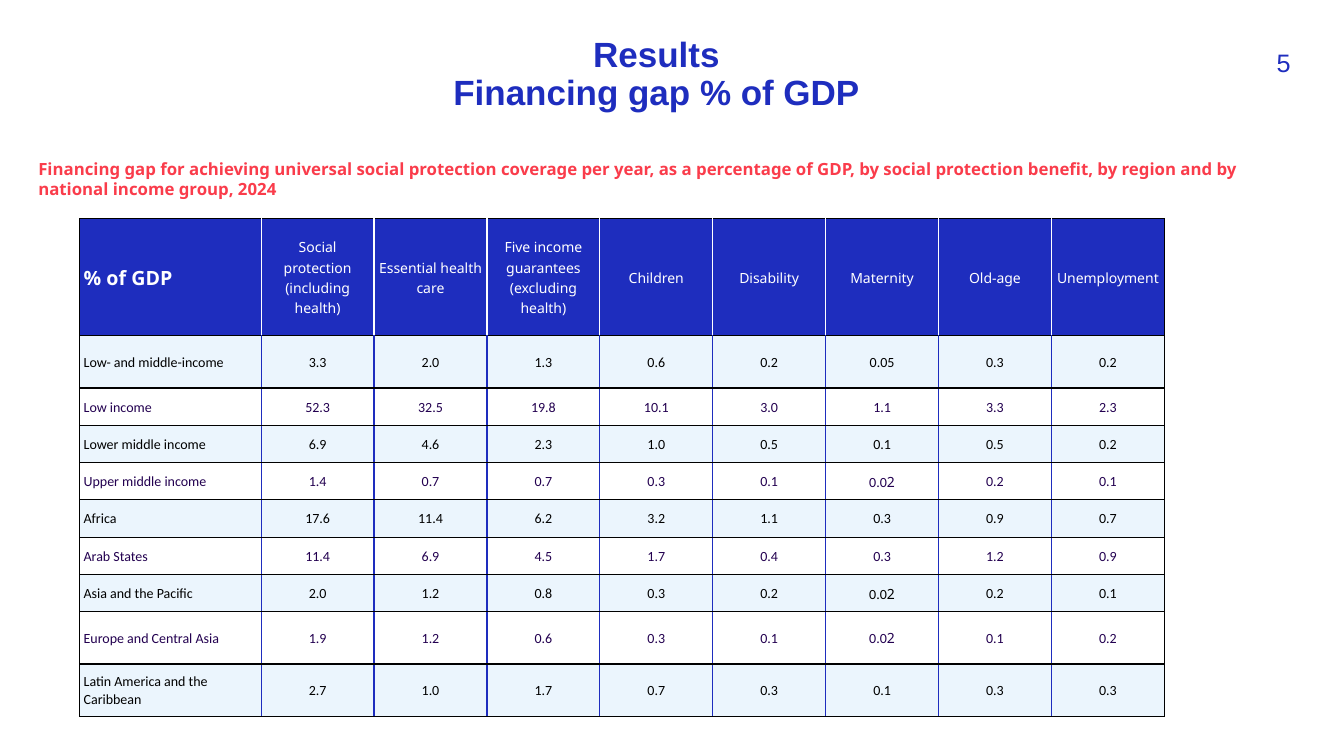
"""Builds a slide with a table of social protection financing gaps as % of GDP."""
from lxml import etree
from pptx import Presentation
from pptx.dml.color import RGBColor
from pptx.enum.text import MSO_ANCHOR, PP_ALIGN
from pptx.oxml.ns import qn
from pptx.util import Inches, Pt

LEFT, CENTER, RIGHT = PP_ALIGN.LEFT, PP_ALIGN.CENTER, PP_ALIGN.RIGHT
MIDDLE = MSO_ANCHOR.MIDDLE
BLUE, RED, WHITE, BLACK = "1E2DBE", "FA3C4B", "FFFFFF", "000000"
PURPLE, PALE = "230050", "EBF5FD"


def style(p, size, font, color, bold=False):
    for r in p.runs:
        r.font.size = Pt(size)
        r.font.name = font
        r.font.bold = bold
        r.font.color.rgb = RGBColor.from_string(color)


def border(cell, **sides):
    for i, (side, color) in enumerate(sides.items()):
        ln = etree.Element(qn("a:ln" + side), w=str(Pt(1)))
        fill = etree.SubElement(ln, qn("a:solidFill"))
        etree.SubElement(fill, qn("a:srgbClr"), val=color)
        cell._tc.get_or_add_tcPr().insert(i, ln)


prs = Presentation()
prs.slide_width, prs.slide_height = Inches(13.33), Inches(7.5)
s = prs.slides.add_slide(prs.slide_layouts[6])

texts = [
    ("Results\vFinancing gap % of GDP", 0.38, 0.37, 12.26, 0.79,
     CENTER, 25, "Arial", BLUE, True, 0.9),
    ("5", 12.21, 0.47, 0.59, 0.31, RIGHT, 18, "Arial", BLUE, False, 1.0),
    ("Financing gap for achieving universal social protection coverage per year, "
     "as a percentage of GDP, by social protection benefit, by region and by "
     "national income group, 2024", 0.38, 1.57, 12.26, 0.43,
     LEFT, 12, "Noto Sans", RED, True, 1.0),
]
for text, x, y, w, h, align, size, font, color, bold, spacing in texts:
    tf = s.shapes.add_textbox(Inches(x), Inches(y), Inches(w), Inches(h)).text_frame
    tf.word_wrap = True
    tf.margin_left = tf.margin_right = tf.margin_top = tf.margin_bottom = 0
    p = tf.paragraphs[0]
    p.text = text
    p.alignment = align
    p.line_spacing = spacing
    style(p, size, font, color, bold)

rows = [
    ["% of GDP", "Social protection (including health)", "Essential health care",
     "Five income guarantees (excluding health)", "Children", "Disability",
     "Maternity", "Old-age", "Unemployment"],
    ["Low- and middle-income", "3.3", "2.0", "1.3", "0.6", "0.2", "0.05", "0.3", "0.2"],
    ["Low income", "52.3", "32.5", "19.8", "10.1", "3.0", "1.1", "3.3", "2.3"],
    ["Lower middle income", "6.9", "4.6", "2.3", "1.0", "0.5", "0.1", "0.5", "0.2"],
    ["Upper middle income", "1.4", "0.7", "0.7", "0.3", "0.1", "0.02", "0.2", "0.1"],
    ["Africa", "17.6", "11.4", "6.2", "3.2", "1.1", "0.3", "0.9", "0.7"],
    ["Arab States", "11.4", "6.9", "4.5", "1.7", "0.4", "0.3", "1.2", "0.9"],
    ["Asia and the Pacific", "2.0", "1.2", "0.8", "0.3", "0.2", "0.02", "0.2", "0.1"],
    ["Europe and Central Asia", "1.9", "1.2", "0.6", "0.3", "0.1", "0.02", "0.1", "0.2"],
    ["Latin America and the Caribbean", "2.7", "1.0", "1.7", "0.7", "0.3", "0.1",
     "0.3", "0.3"],
]
widths = [1.8] + [1.12] * 8
heights = [1.16, 0.52] + [0.37] * 6 + [0.52] * 2
last = len(widths) - 1

table = s.shapes.add_table(len(rows), len(widths), Inches(0.79), Inches(2.17),
                           Inches(sum(widths)), Inches(sum(heights))).table
table.horz_banding = False
for column, w in zip(table.columns, widths):
    column.width = Inches(w)

for i, row in enumerate(rows):
    table.rows[i].height = Inches(heights[i])
    if i == 0:
        fill, ink, font, divider = BLUE, WHITE, "Noto Sans", WHITE
    elif i % 2:
        fill, ink, font, divider = PALE, BLACK, "Calibri", BLUE
    else:
        fill, ink, font, divider = None, PURPLE, "Calibri", BLUE
    for j, text in enumerate(row):
        cell = table.cell(i, j)
        cell.vertical_anchor = MIDDLE
        cell.margin_left = cell.margin_right = Inches(0.04)
        cell.margin_top = cell.margin_bottom = Inches(0.02)
        if fill:
            cell.fill.solid()
            cell.fill.fore_color.rgb = RGBColor.from_string(fill)
        else:
            cell.fill.background()
        border(cell, L=divider if j else BLACK, R=divider if j < last else BLACK,
               T=BLACK, B=BLACK)
        p = cell.text_frame.paragraphs[0]
        p.alignment = CENTER if j else LEFT
        p.line_spacing = 1.07
        for part in ("0.0", "2") if text == "0.02" else (text,):
            p.add_run().text = part
        corner = i == j == 0
        style(p, 14 if corner else 10, font, ink, corner)
        if text == "0.02":
            p.runs[1].font.name = "Noto Sans"

prs.save("out.pptx")
